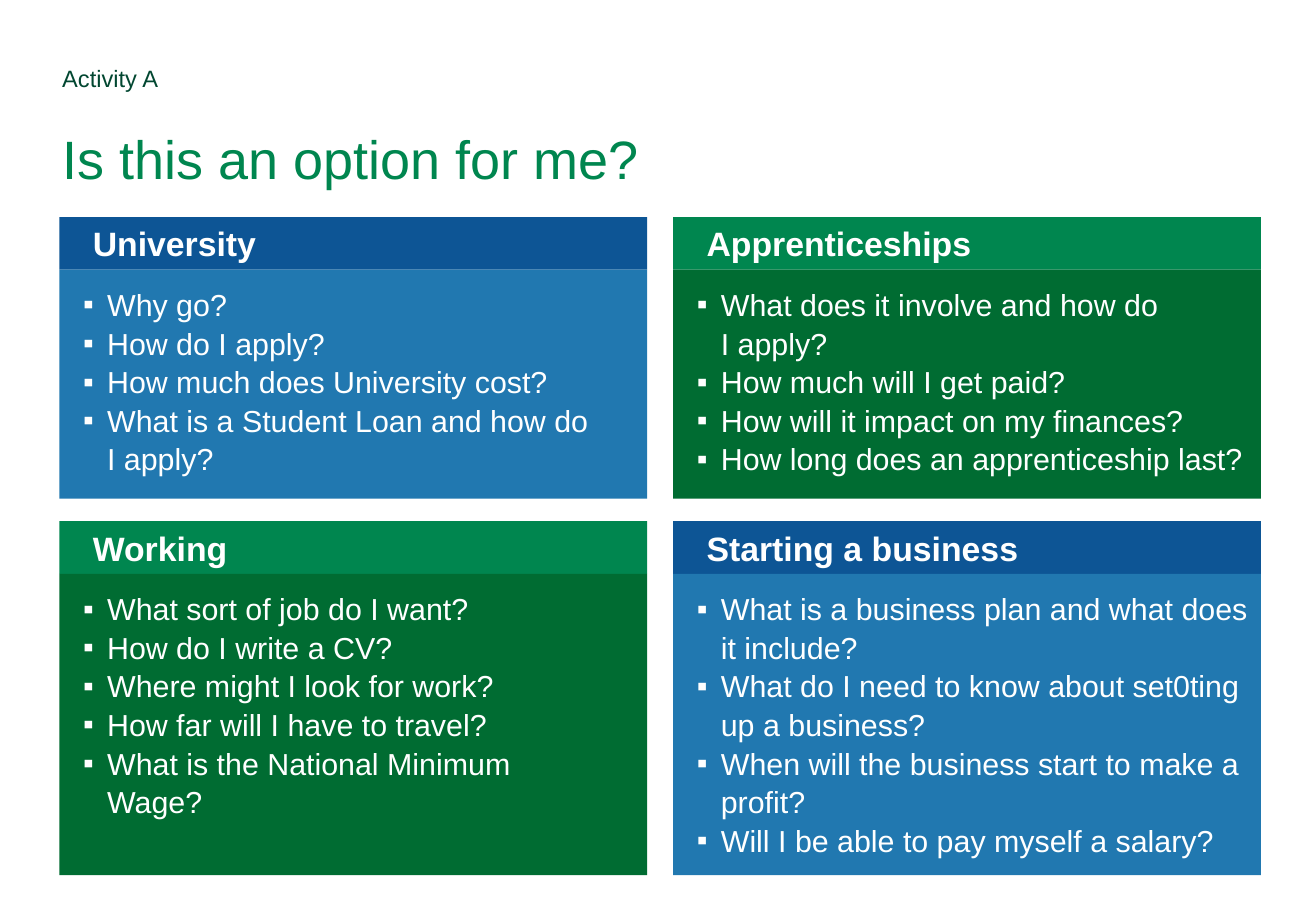
from lxml.etree import SubElement
from pptx import Presentation
from pptx.dml.color import RGBColor
from pptx.enum.shapes import MSO_SHAPE
from pptx.enum.text import MSO_ANCHOR, PP_ALIGN
from pptx.oxml.ns import qn
from pptx.util import Cm, Pt

COLOURS = {
    "label": "024731", "title": "00864F", "text": "FFFFFF",
    "blue header": "0D5595", "blue body": "2178B0",
    "green header": "00864F", "green body": "006C32",
}
TITLE_LINES = [("Activity A", 14, "label", 0), ("Is this an option for me?", 32, "title", 20)]
OPTIONS = [
    ("University", "blue", [
        "Why go?",
        "How do I apply?",
        "How much does University cost?",
        "What is a Student Loan and how do \vI apply?",
    ]),
    ("Apprenticeships", "green", [
        "What does it involve and how do \vI apply?",
        "How much will I get paid?",
        "How will it impact on my finances?",
        "How long does an apprenticeship last?",
    ]),
    ("Working", "green", [
        "What sort of job do I want?",
        "How do I write a CV?",
        "Where might I look for work?",
        "How far will I have to travel?",
        "What is the National Minimum Wage?",
    ]),
    ("Starting a business", "blue", [
        "What is a business plan and what does it include?",
        "What do I need to know about set0ting up a business?",
        "When will the business start to make a profit?",
        "Will I be able to pay myself a salary?",
    ]),
]
COLUMN_LEFTS = [1.24, 14.07]
COLUMN_INSETS = [0.79, 0]
ROWS = [(4.54, 4.79), (10.9, 6.3)]
PANEL_WIDTH, HEADER_HEIGHT = 12.29, 1.1


def set_insets(frame, left, top, right, bottom):
    frame.margin_left, frame.margin_top = Cm(left), Cm(top)
    frame.margin_right, frame.margin_bottom = Cm(right), Cm(bottom)
    frame.word_wrap = True


def format_runs(para, size, colour, bold=False):
    for span in para.runs:
        span.font.name = "Arial"
        span.font.size = Pt(size)
        span.font.bold = bold
        span.font.color.rgb = RGBColor.from_string(COLOURS[colour])


def add_panel(page, left, top, height, colour, lines, anchor):
    box = page.shapes.add_shape(
        MSO_SHAPE.RECTANGLE, Cm(left), Cm(top), Cm(PANEL_WIDTH), Cm(height))
    box.shadow.inherit = False
    box.fill.solid()
    box.fill.fore_color.rgb = RGBColor.from_string(COLOURS[colour])
    box.line.fill.background()
    frame = box.text_frame
    frame.text = "\n".join(lines)
    frame.vertical_anchor = anchor
    for para in frame.paragraphs:
        para.alignment = PP_ALIGN.LEFT
    return frame


def add_bullet(para):
    para.line_spacing = 1.06
    properties = para._p.get_or_add_pPr()
    properties.set("marL", str(Cm(0.5)))
    properties.set("indent", str(-Cm(0.5)))
    SubElement(properties, qn("a:buFont")).set("typeface", "Arial")
    SubElement(properties, qn("a:buChar")).set("char", "▪")


def add_title(page):
    title = page.shapes.title
    title.left, title.top, title.width, title.height = Cm(1.3), Cm(1.33), Cm(15.62), Cm(2.77)
    frame = title.text_frame
    frame.text = "\n".join(line[0] for line in TITLE_LINES)
    frame.vertical_anchor = MSO_ANCHOR.TOP
    set_insets(frame, 0, 0, 0, 0)
    for para, (_, size, colour, gap) in zip(frame.paragraphs, TITLE_LINES):
        para.alignment = PP_ALIGN.LEFT
        para.line_spacing = 1.0
        para.space_before = Pt(gap)
        format_runs(para, size, colour)


def add_option(page, index, heading, hue, questions):
    row, column = divmod(index, len(COLUMN_LEFTS))
    left = COLUMN_LEFTS[column]
    top, body_height = ROWS[row]
    header = add_panel(page, left, top, HEADER_HEIGHT, hue + " header", [heading], MSO_ANCHOR.MIDDLE)
    set_insets(header, 0.7, 0.13, 0.25, 0.13)
    format_runs(header.paragraphs[0], 20, "text", True)
    body = add_panel(page, left, top + HEADER_HEIGHT, body_height, hue + " body", questions, MSO_ANCHOR.TOP)
    set_insets(body, 0.5, 0.3, COLUMN_INSETS[column], 0.2)
    for para in body.paragraphs:
        add_bullet(para)
        format_runs(para, 18, "text")


def main():
    deck = Presentation()
    deck.slide_width, deck.slide_height = Cm(27.51), Cm(19.05)
    page = deck.slides.add_slide(deck.slide_layouts[5])
    add_title(page)
    for index, option in enumerate(OPTIONS):
        add_option(page, index, *option)
    deck.save("out.pptx")


if __name__ == "__main__":
    main()
